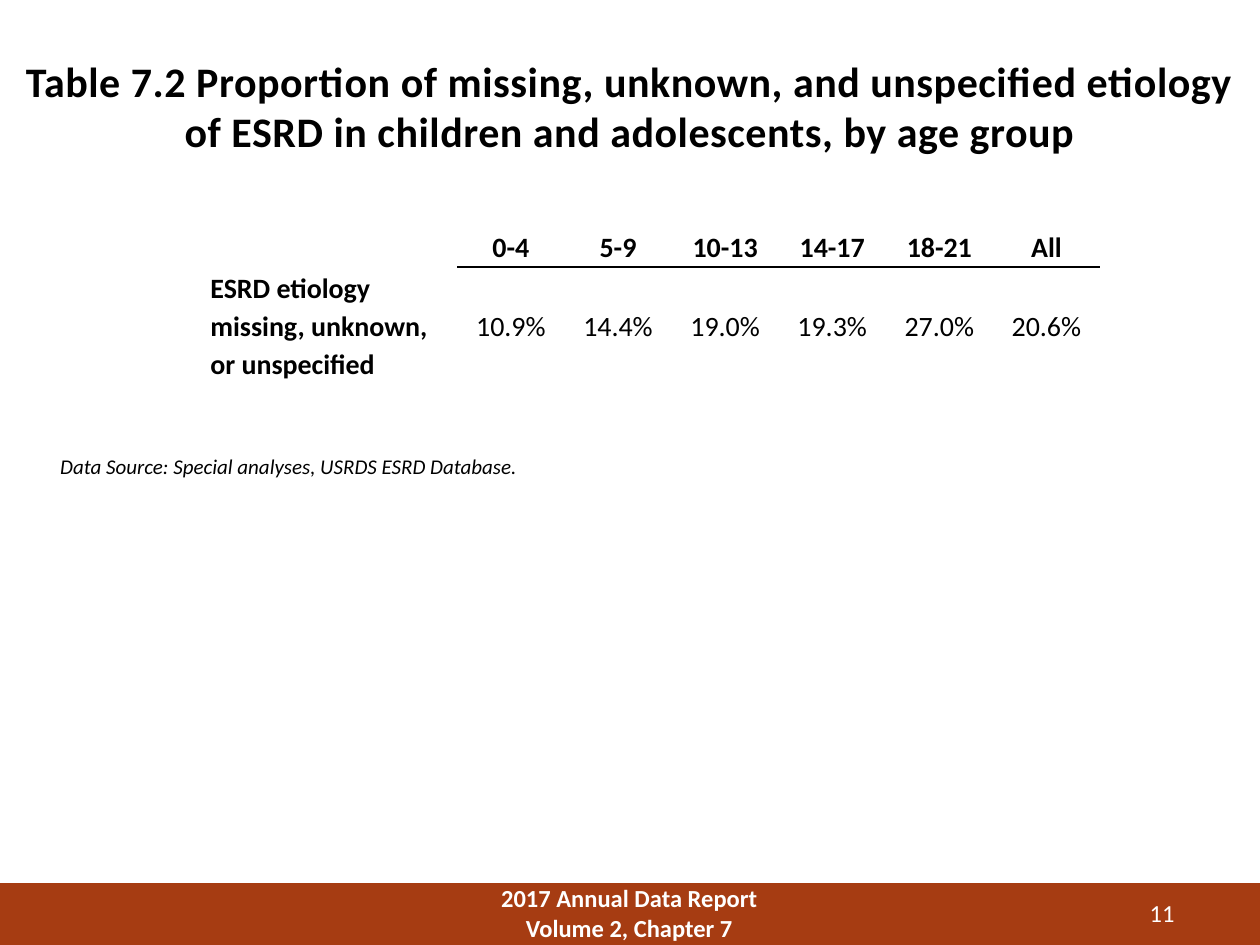
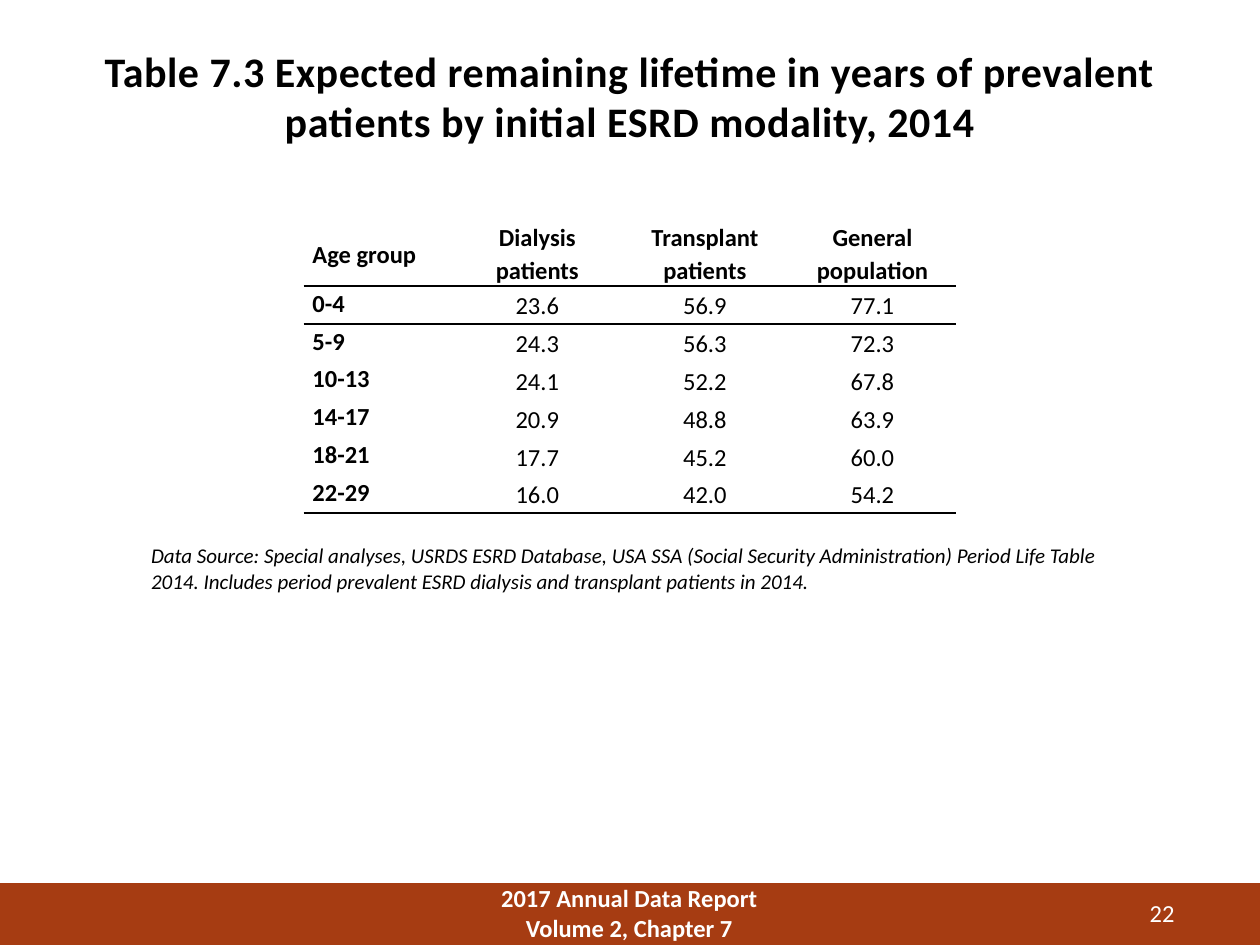
"""Builds two slides, each with a titled table and a data source line."""
from lxml import etree
from pptx import Presentation
from pptx.dml.color import RGBColor
from pptx.enum.shapes import MSO_SHAPE
from pptx.enum.text import MSO_ANCHOR, PP_ALIGN
from pptx.oxml.ns import qn
from pptx.util import Inches, Pt

RECT = MSO_SHAPE.RECTANGLE
LEFT, MID, RIGHT = PP_ALIGN.LEFT, PP_ALIGN.CENTER, PP_ALIGN.RIGHT
TOP, CENTER = MSO_ANCHOR.TOP, MSO_ANCHOR.MIDDLE

FONT = "Calibri"
BLACK, WHITE, RUST = "000000", "FFFFFF", "A63C12"
PLAIN = "{2D5ABB26-0587-4C30-8999-92F81FD0307C}"
FOOTER = ["2017 Annual Data Report", "Volume 2, Chapter 7"]

SLIDES = [
    {
        "number": "11",
        "title": "Table 7.2 Proportion of missing, unknown, and unspecified "
                 "etiology of ESRD in children and adolescents, by age group",
        "title_at": (0, 0.38, 10, 0.87),
        "source": "Data Source: Special analyses, USRDS ESRD Database.",
        "source_at": (0.38, 3.55, 10, 0.3),
        "table_at": (1.67, 1.79),
        "cols": [1.96] + [0.85] * 6,
        "heights": [0.33, 0.92],
        "size": 16, "inset": 0, "label": CENTER,
        "rules": [0], "first": 1,
        "rows": [
            ["", "0-4", "5-9", "10-13", "14-17", "18-21", "All"],
            ["ESRD etiology missing, unknown, or unspecified",
             "10.9%", "14.4%", "19.0%", "19.3%", "27.0%", "20.6%"],
        ],
    },
    {
        "number": "22",
        "title": "Table 7.3 Expected remaining lifetime in years of prevalent "
                 "patients by initial ESRD modality, 2014",
        "title_at": (0.5, 0.3, 9, 1.25),
        "source": "Data Source: Special analyses, USRDS ESRD Database, USA SSA "
                  "(Social Security Administration) Period Life Table 2014. "
                  "Includes period prevalent ESRD dialysis and transplant "
                  "patients in 2014.",
        "source_at": (1.1, 4.26, 7.79, 0.5),
        "table_at": (2.41, 1.75),
        "cols": [1.19] + [1.33] * 3,
        "heights": [0.52] + [0.3] * 6,
        "size": 14, "inset": 0.07, "label": TOP,
        "rules": [0, 6], "first": 0,
        "rows": [
            ["Age group", "Dialysis patients", "Transplant patients",
             "General population"],
            ["0-4", "23.6", "56.9", "77.1"],
            ["5-9", "24.3", "56.3", "72.3"],
            ["10-13", "24.1", "52.2", "67.8"],
            ["14-17", "20.9", "48.8", "63.9"],
            ["18-21", "17.7", "45.2", "60.0"],
            ["22-29", "16.0", "42.0", "54.2"],
        ],
    },
]


def paint(hue):
    return RGBColor.from_string(hue)


def write(para, text, size, hue=BLACK, bold=False, italic=False, align=LEFT):
    para.alignment = align
    run = para.add_run()
    run.text = text
    font = run.font
    font.name, font.size, font.bold, font.italic = FONT, Pt(size), bold, italic
    font.color.rgb = paint(hue)
    return run


def add_text(slide, at, lines, size, **style):
    frame = slide.shapes.add_textbox(*map(Inches, at)).text_frame
    frame.word_wrap = True
    frame.vertical_anchor = TOP
    runs = []
    for i, line in enumerate(lines):
        para = frame.add_paragraph() if i else frame.paragraphs[0]
        runs.append(write(para, line, size, **style))
    return frame, runs


def add_rule(cell, side):
    line = etree.Element(qn("a:" + side), w=str(Pt(1)))
    fill = etree.SubElement(line, qn("a:solidFill"))
    etree.SubElement(fill, qn("a:srgbClr"), val=BLACK)
    cell._tc.get_or_add_tcPr().insert(0, line)


def add_table(slide, spec):
    rows, cols, heights = spec["rows"], spec["cols"], spec["heights"]
    at = (*spec["table_at"], sum(cols), sum(heights))
    frame = slide.shapes.add_table(len(rows), len(cols), *map(Inches, at))
    table = frame.table
    table.first_row = table.horz_banding = False
    table._tbl.tblPr.find(qn("a:tableStyleId")).text = PLAIN
    for col, width in zip(table.columns, cols):
        col.width = Inches(width)
    for row, height in zip(table.rows, heights):
        row.height = Inches(height)
    for r, row in enumerate(rows):
        for c, text in enumerate(row):
            cell = table.cell(r, c)
            cell.fill.background()
            cell.margin_top = cell.margin_bottom = 0
            cell.margin_left = cell.margin_right = Inches(spec["inset"])
            cell.vertical_anchor = spec["label"] if r and not c else CENTER
            para = cell.text_frame.paragraphs[0]
            para.line_spacing = 1.1
            if text:
                write(para, text, spec["size"], bold=not (r and c),
                      align=MID if c else LEFT)
            if c >= spec["first"]:
                if r in spec["rules"]:
                    add_rule(cell, "lnB")
                if r - 1 in spec["rules"]:
                    add_rule(cell, "lnT")


def add_footer(slide, number):
    band = slide.shapes.add_shape(RECT, *map(Inches, (0, 7.01, 10, 0.49)))
    band.shadow.inherit = False
    band.fill.solid()
    band.fill.fore_color.rgb = paint(RUST)
    band.line.fill.background()
    add_text(slide, (3.58, 6.96, 2.83, 0.33), FOOTER, 14,
             hue=WHITE, bold=True, align=MID)
    add_text(slide, (8.42, 7.08, 1, 0.3), [number], 14, hue=WHITE, align=RIGHT)


def add_slide(deck, spec):
    slide = deck.slides.add_slide(deck.slide_layouts[6])
    add_footer(slide, spec["number"])
    frame, runs = add_text(slide, spec["title_at"], [spec["title"]], 24,
                           bold=True, align=MID)
    frame.margin_top = Inches(0.06)
    runs[0].font._element.set("spc", "30")
    add_table(slide, spec)
    add_text(slide, spec["source_at"], [spec["source"]], 12, italic=True)


def main():
    deck = Presentation()
    deck.slide_width, deck.slide_height = Inches(10), Inches(7.5)
    for spec in SLIDES:
        add_slide(deck, spec)
    deck.save("out.pptx")


if __name__ == "__main__":
    main()
